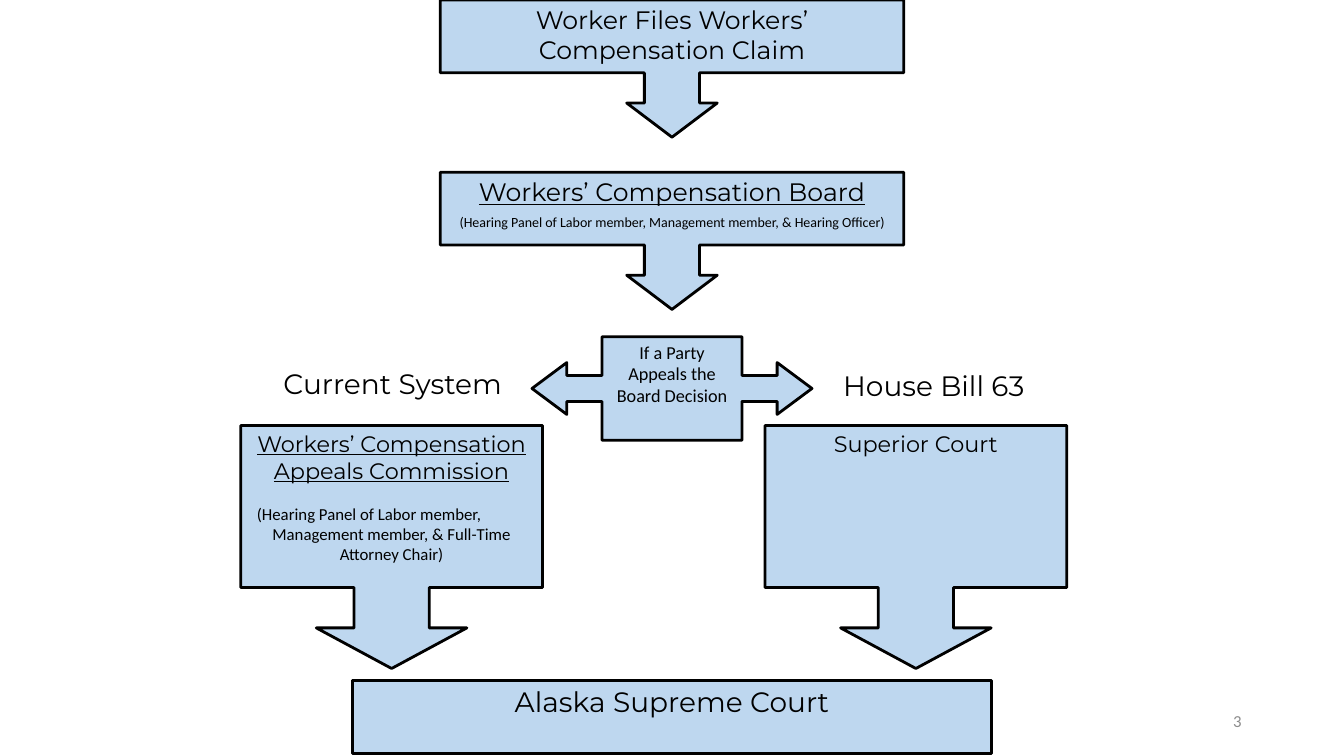
from pptx import Presentation
from pptx.dml.color import RGBColor
from pptx.enum.shapes import MSO_SHAPE
from pptx.enum.text import MSO_ANCHOR, PP_ALIGN
from pptx.util import Pt

RECT = MSO_SHAPE.RECTANGLE
DOWN = MSO_SHAPE.DOWN_ARROW_CALLOUT
SIDES = MSO_SHAPE.LEFT_RIGHT_ARROW_CALLOUT
TOP, MIDDLE = MSO_ANCHOR.TOP, MSO_ANCHOR.MIDDLE
LEFT, CENTER, RIGHT = PP_ALIGN.LEFT, PP_ALIGN.CENTER, PP_ALIGN.RIGHT

BLACK = RGBColor(0x00, 0x00, 0x00)
BLUE = RGBColor(0xBE, 0xD7, 0xEF)
GRAY = RGBColor(0x8C, 0x8C, 0x8C)
HEADING, BODY = "Montserrat", "Calibri"


class Flowchart:
    """Holds the style and the current slide."""

    line_width = 2
    inset = 3

    def __init__(self, slide):
        self.slide = slide

    def set_text(self, shape, lines, anchor=TOP):
        """Each line is (text, size, font, formats)."""
        tf = shape.text_frame
        frame = dict.fromkeys(
            ("margin_left", "margin_top", "margin_right", "margin_bottom"),
            Pt(self.inset))
        frame.update(word_wrap=True, vertical_anchor=anchor)
        for name, value in frame.items():
            setattr(tf, name, value)
        for i, (text, size, font, formats) in enumerate(lines):
            p = tf.add_paragraph() if i else tf.paragraphs[0]
            p.alignment = formats.get("align", CENTER)
            p.space_before = Pt(formats.get("before", 0))
            if "indent" in formats:
                p._p.get_or_add_pPr().set("marL", str(Pt(formats["indent"])))
            r = p.add_run()
            r.text = text
            style = {"name": font, "size": Pt(size),
                     "underline": formats.get("underline", False)}
            for name, value in style.items():
                setattr(r.font, name, value)
            r.font.color.rgb = formats.get("color", BLACK)

    def box(self, kind, x, y, w, h, lines, adjustments=()):
        sp = self.slide.shapes.add_shape(kind, Pt(x), Pt(y), Pt(w), Pt(h))
        sp.shadow.inherit = False
        sp.fill.solid()
        sp.fill.fore_color.rgb = BLUE
        sp.line.color.rgb = BLACK
        sp.line.width = Pt(self.line_width)
        for i, value in enumerate(adjustments):
            sp.adjustments[i] = value
        self.set_text(sp, lines)

    def label(self, x, y, w, h, lines, anchor=TOP):
        sp = self.slide.shapes.add_textbox(Pt(x), Pt(y), Pt(w), Pt(h))
        self.set_text(sp, lines, anchor)


def main():
    prs = Presentation()
    prs.slide_width, prs.slide_height = Pt(960), Pt(540)
    s = prs.slides.add_slide(prs.slide_layouts[6])
    chart = Flowchart(s)
    underlined = {"underline": True}

    # Claim and board, stacked at the top
    steps = [
        [("Worker Files Workers’", 18, HEADING, {}),
         ("Compensation Claim", 18, HEADING, {})],
        [("Workers’ Compensation Board", 18, HEADING, underlined),
         ("(Hearing Panel of Labor member, Management member, & Hearing Officer)",
          10, BODY, {"before": 5})],
    ]
    for i, lines in enumerate(steps):
        chart.box(DOWN, 314.5, 123 * i, 331, 98, lines,
                  (0.402, 0.33, 0.249, 0.531))

    # Appeal decision
    chart.box(SIDES, 380, 240.5, 200, 74,
              [("If a Party", 13, BODY, {}),
               ("Appeals the Board Decision", 13, BODY, {})],
              (0.25, 0.25, 0.336, 0.5))

    # The two appeal routes
    chart.label(160, 259, 241, 24, [("Current System", 20, HEADING, {})])
    chart.label(587.5, 260.5, 159, 22, [("House Bill 63", 20, HEADING, {})])
    commission = [
        ("Workers’ Compensation Appeals Commission", 16, HEADING, underlined),
        ("(Hearing Panel of Labor member,", 12, BODY,
         {"before": 14.5, "align": LEFT, "indent": 8.5}),
        ("Management member, & Full-Time", 12, BODY, {}),
        ("Attorney Chair)", 12, BODY, {}),
    ]
    superior = [("Superior Court", 16, HEADING, {})]
    for x, lines in ((172, commission), (546.5, superior)):
        chart.box(DOWN, x, 304, 215.5, 173.5, lines,
                  (0.31, 0.31, 0.167, 0.667))

    # Final court
    chart.box(RECT, 252, 486, 456, 52.5,
              [("Alaska Supreme Court", 20, HEADING, {})])

    # Slide number
    chart.label(674, 500.5, 216, 29,
                [("3", 12, BODY, {"align": RIGHT, "color": GRAY})], MIDDLE)

    prs.save("out.pptx")


if __name__ == "__main__":
    main()
